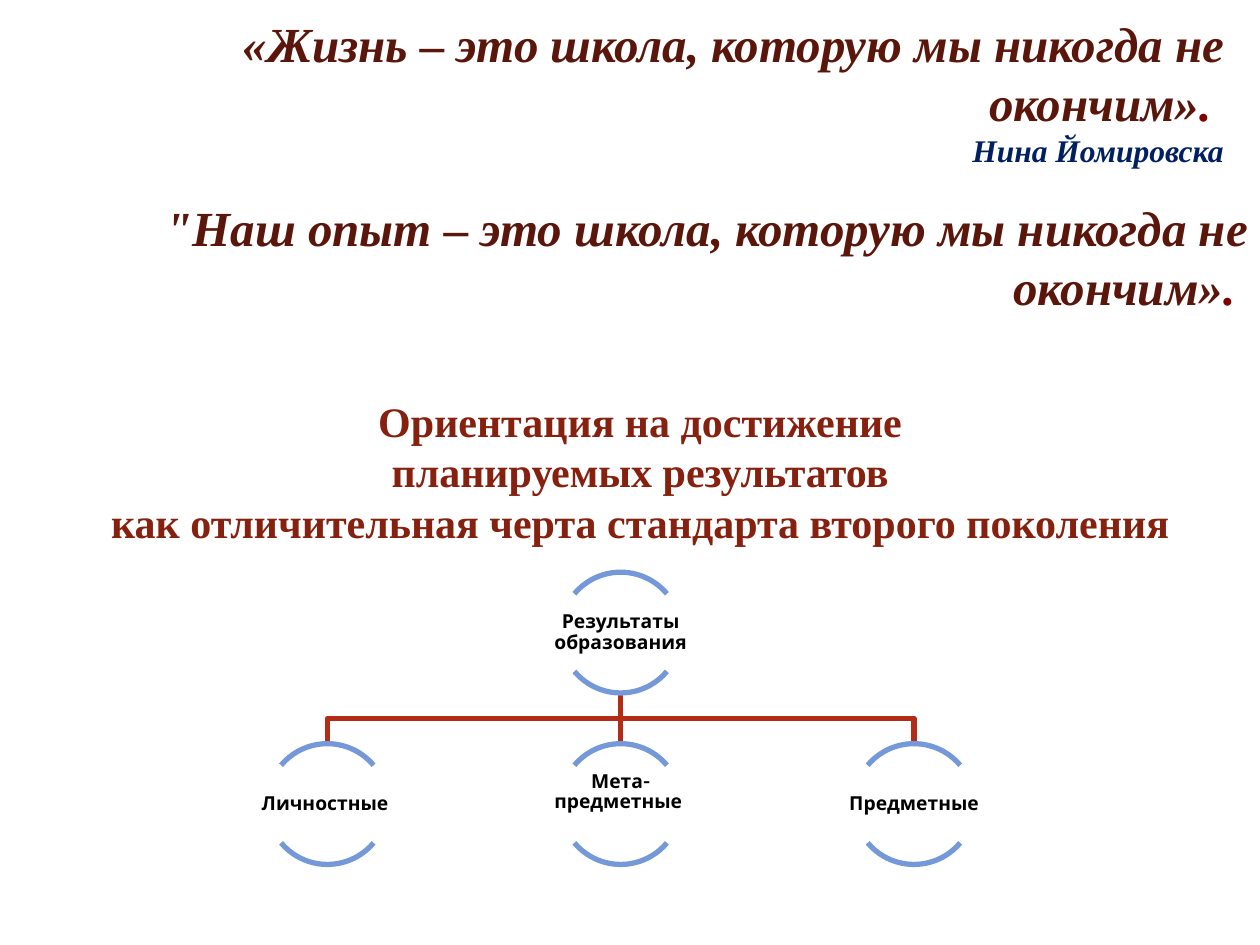
"""Build a slide with two quotations and a tree of education results."""
from lxml import etree
from pptx import Presentation
from pptx.dml.color import RGBColor
from pptx.enum.shapes import MSO_CONNECTOR, MSO_SHAPE
from pptx.enum.text import MSO_ANCHOR, PP_ALIGN
from pptx.oxml.ns import qn
from pptx.util import Pt

ARC, STRAIGHT = MSO_SHAPE.ARC, MSO_CONNECTOR.STRAIGHT
TOP, MIDDLE = MSO_ANCHOR.TOP, MSO_ANCHOR.MIDDLE
RIGHT, CENTER = PP_ALIGN.RIGHT, PP_ALIGN.CENTER

THEME = {
    "serif": "Times New Roman", "sans": "Karla",
    "quote": "5A160B", "stop": "800000", "author": "002060",
    "heading": "862110", "label": "000000", "paper": "FFFFFF",
    "branch": "B32C16", "arc": "7598D9", "line": 3,
    "quote_size": 28, "author_size": 18, "heading_size": 24, "label_size": 11,
}

QUOTE = {"size": THEME["quote_size"], "color": THEME["quote"]}
STOP = (". ", {"size": THEME["quote_size"], "color": THEME["stop"]})
AUTHOR = {"size": THEME["author_size"], "color": THEME["author"]}
QUOTES = [
    ((105.2, 4.3, 601.2, 97.2), [
        [("«Жизнь – это школа, которую мы никогда не окончим»", QUOTE), STOP],
        [("Нина Йомировска", AUTHOR)],
    ]),
    ((70.6, 109.4, 649.4, 74.9), [
        [("\"Наш опыт – это школа, которую мы никогда не окончим»", QUOTE), STOP],
    ]),
]
HEADING = [
    "Ориентация на достижение",
    "планируемых результатов",
    "как отличительная черта стандарта второго поколения",
]
HEADING_BOX = (42.5, 222.5, 646.6, 298.1)
ROOT = ["Результаты", "образования"]
CHILDREN = [(["Личностные "], 0), (["Мета-", "предметные "], 13.5), (["Предметные"], 0)]

ROOT_X, ROOT_Y, CHILD_Y = 354.7, 327, 425
STEP, DIAMETER = 167.6, 69
LABEL_W, LABEL_H = 138.2, 44.4
ARCS = [(132, 192), (24, 84)]


def rgb(name):
    return RGBColor.from_string(THEME.get(name, name))


def add_text(shapes, box, paragraphs, *, font, align, bold=True, italic=False,
             anchor=TOP, insets=(7.2, 3.6, 7.2, 3.6), fill=None, spacing=None):
    sp = shapes.add_textbox(*map(Pt, box))
    if fill:
        sp.fill.solid()
        sp.fill.fore_color.rgb = rgb(fill)
    tf = sp.text_frame
    tf.word_wrap = True
    tf.vertical_anchor = anchor
    tf.margin_left, tf.margin_top, tf.margin_right, tf.margin_bottom = map(Pt, insets)
    for i, runs in enumerate(paragraphs):
        p = tf.paragraphs[0] if i == 0 else tf.add_paragraph()
        p.alignment = align
        if spacing:
            p.line_spacing = spacing
        for text, style in runs:
            r = p.add_run()
            r.text = text
            r.font.name = font
            r.font.size = Pt(style["size"])
            r.font.color.rgb = rgb(style["color"])
            r.font.bold, r.font.italic = bold, italic


def set_line(sp, color):
    sp.line.color.rgb = rgb(color)
    sp.line.width = Pt(THEME["line"])


def add_branch(shapes, x):
    top, bottom = ROOT_Y + DIAMETER, CHILD_Y
    mid = (top + bottom) / 2
    if x == ROOT_X:
        sp = shapes.add_connector(STRAIGHT, *map(Pt, (x, top, x, bottom)))
        etree.SubElement(sp._element.spPr, qn("a:effectLst"))
    else:
        builder = shapes.build_freeform(Pt(ROOT_X), Pt(top))
        corners = [(ROOT_X, mid), (x, mid), (x, bottom)]
        builder.add_line_segments([(Pt(a), Pt(b)) for a, b in corners], close=False)
        sp = builder.convert_to_shape()
        sp.fill.background()
        sp.shadow.inherit = False
    set_line(sp, "branch")


def add_node(shapes, x, y, lines, lift=0):
    for angles in ARCS:
        sp = shapes.add_shape(ARC, Pt(x - DIAMETER / 2), Pt(y), Pt(DIAMETER), Pt(DIAMETER))
        sp.adjustments[0], sp.adjustments[1] = angles
        sp.fill.background()
        sp.shadow.inherit = False
        set_line(sp, "arc")
    style = {"size": THEME["label_size"], "color": THEME["label"]}
    box = (x - LABEL_W / 2, y + (DIAMETER - LABEL_H) / 2, LABEL_W, LABEL_H)
    add_text(shapes, box, [[(line, style)] for line in lines], font=THEME["sans"],
             align=CENTER, anchor=MIDDLE, insets=(0.7, 0.7, 0.7, 0.7 + lift), spacing=0.9)


def main():
    prs = Presentation()
    prs.slide_width, prs.slide_height = Pt(720), Pt(540)
    s = prs.slides.add_slide(prs.slide_layouts[6])
    for box, paragraphs in QUOTES:
        add_text(s.shapes, box, paragraphs, font=THEME["serif"], align=RIGHT, italic=True)
    style = {"size": THEME["heading_size"], "color": THEME["heading"]}
    add_text(s.shapes, HEADING_BOX, [[(line, style)] for line in HEADING],
             font=THEME["serif"], align=CENTER, fill="paper")
    tree = s.shapes.add_group_shape().shapes
    centers = [ROOT_X + (i - 1) * STEP for i in range(len(CHILDREN))]
    for x in centers:
        add_branch(tree, x)
    add_node(tree, ROOT_X, ROOT_Y, ROOT)
    for x, (lines, lift) in zip(centers, CHILDREN):
        add_node(tree, x, CHILD_Y, lines, lift)
    prs.save("out.pptx")


if __name__ == "__main__":
    main()
